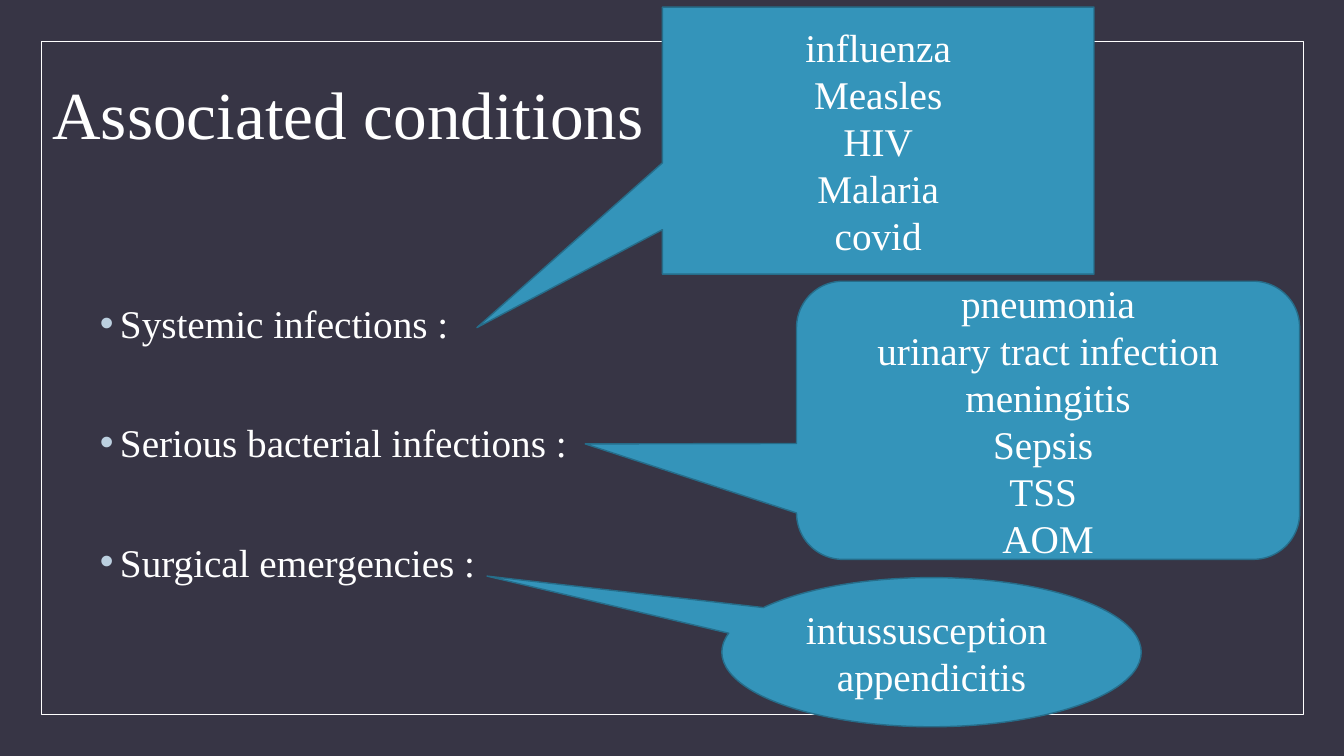
import dataclasses

import pptx
import pptx.dml.color
import pptx.enum.shapes
import pptx.enum.text
import pptx.oxml
import pptx.oxml.ns
import pptx.util
from pptx.util import Inches

Align = pptx.enum.text.PP_ALIGN
Preset = pptx.enum.shapes.MSO_SHAPE


@dataclasses.dataclass(frozen=True)
class Theme:
    font: str = "Times New Roman"
    background: str = "373545"
    text: str = "FFFFFF"
    bullet: str = "BCD0E0"
    callout: str = "3494BA"
    outline: str = "266D8A"
    title_size: float = 48
    text_size: float = 28
    line_height: float = 33.6
    bullet_gap: float = 51.6


theme = Theme()


def color(value):
    return pptx.dml.color.RGBColor.from_string(value)


def write(frame, lines, size=theme.text_size, align=Align.LEFT,
          spacing=pptx.util.Pt(theme.line_height), after=0, bullet=False):
    frame.word_wrap = True
    frame.auto_size = pptx.enum.text.MSO_AUTO_SIZE.NONE
    for index, line in enumerate(lines):
        para = frame.add_paragraph() if index else frame.paragraphs[0]
        para.alignment = align
        para.line_spacing = spacing
        para.space_before = pptx.util.Pt(0)
        para.space_after = pptx.util.Pt(after)
        span = para.add_run()
        span.text = line
        span.font.name = theme.font
        span.font.size = pptx.util.Pt(size)
        span.font.color.rgb = color(theme.text)
        if bullet:
            settings = para._p.get_or_add_pPr()
            settings.set("marL", str(Inches(0.2)))
            settings.set("indent", str(Inches(-0.2)))
            names = pptx.oxml.ns.nsdecls("a")
            settings.append(pptx.oxml.parse_xml(
                f'<a:buClr {names}><a:srgbClr val="{theme.bullet}"/></a:buClr>'))
            settings.append(pptx.oxml.parse_xml(f'<a:buChar {names} char="•"/>'))


# Page and background
deck = pptx.Presentation()
deck.slide_width = Inches(13.33)
deck.slide_height = Inches(7.5)
page = deck.slides.add_slide(deck.slide_layouts[1])
page.background.fill.solid()
page.background.fill.fore_color.rgb = color(theme.background)

# Thin frame
border = page.shapes.add_shape(Preset.RECTANGLE, Inches(0.41), Inches(0.41),
                               Inches(12.52), Inches(6.68))
border.shadow.inherit = False
border.fill.background()
border.line.color.rgb = color(theme.text)
border.line.width = pptx.util.Pt(0.5)

# Title
title = page.shapes.title
title.left, title.top = Inches(0.42), Inches(0.42)
title.width, title.height = Inches(11), Inches(1.5)
title.text_frame.vertical_anchor = pptx.enum.text.MSO_ANCHOR.MIDDLE
write(title.text_frame, ["Associated conditions"], size=theme.title_size, spacing=0.9)

# Groups of conditions
body = page.placeholders[1]
body.left, body.top = Inches(0.89), Inches(1.74)
body.width, body.height = Inches(11.85), Inches(4.86)
body.text_frame.vertical_anchor = pptx.enum.text.MSO_ANCHOR.TOP
body.text_frame.margin_top = Inches(1.23)
write(body.text_frame,
      ["Systemic infections :", "Serious bacterial infections :", "Surgical emergencies :"],
      after=theme.bullet_gap, bullet=True)

# Callouts with examples: preset, place, pointer, lines
callouts = [
    (Preset.RECTANGULAR_CALLOUT, (6.57, 0.07, 4.28, 2.65), (-0.93, 0.7),
     ["influenza", "Measles", "HIV", "Malaria", "covid"]),
    (Preset.ROUNDED_RECTANGULAR_CALLOUT, (7.9, 2.79, 4.99, 2.76), (-0.92, 0.085),
     ["pneumonia", "urinary tract infection meningitis", "Sepsis ", "TSS ", "AOM"]),
    (Preset.OVAL_CALLOUT, (7.16, 5.73, 4.16, 1.48), (-1.06, -0.51),
     ["intussusception ", "appendicitis"]),
]
for preset, place, pointer, examples in callouts:
    callout = page.shapes.add_shape(preset, *map(Inches, place))
    callout.adjustments[0], callout.adjustments[1] = pointer
    callout.shadow.inherit = False
    callout.fill.solid()
    callout.fill.fore_color.rgb = color(theme.callout)
    callout.line.color.rgb = color(theme.outline)
    callout.line.width = pptx.util.Pt(1)
    callout.text_frame.vertical_anchor = pptx.enum.text.MSO_ANCHOR.MIDDLE
    write(callout.text_frame, examples, align=Align.CENTER)

deck.save("out.pptx")
